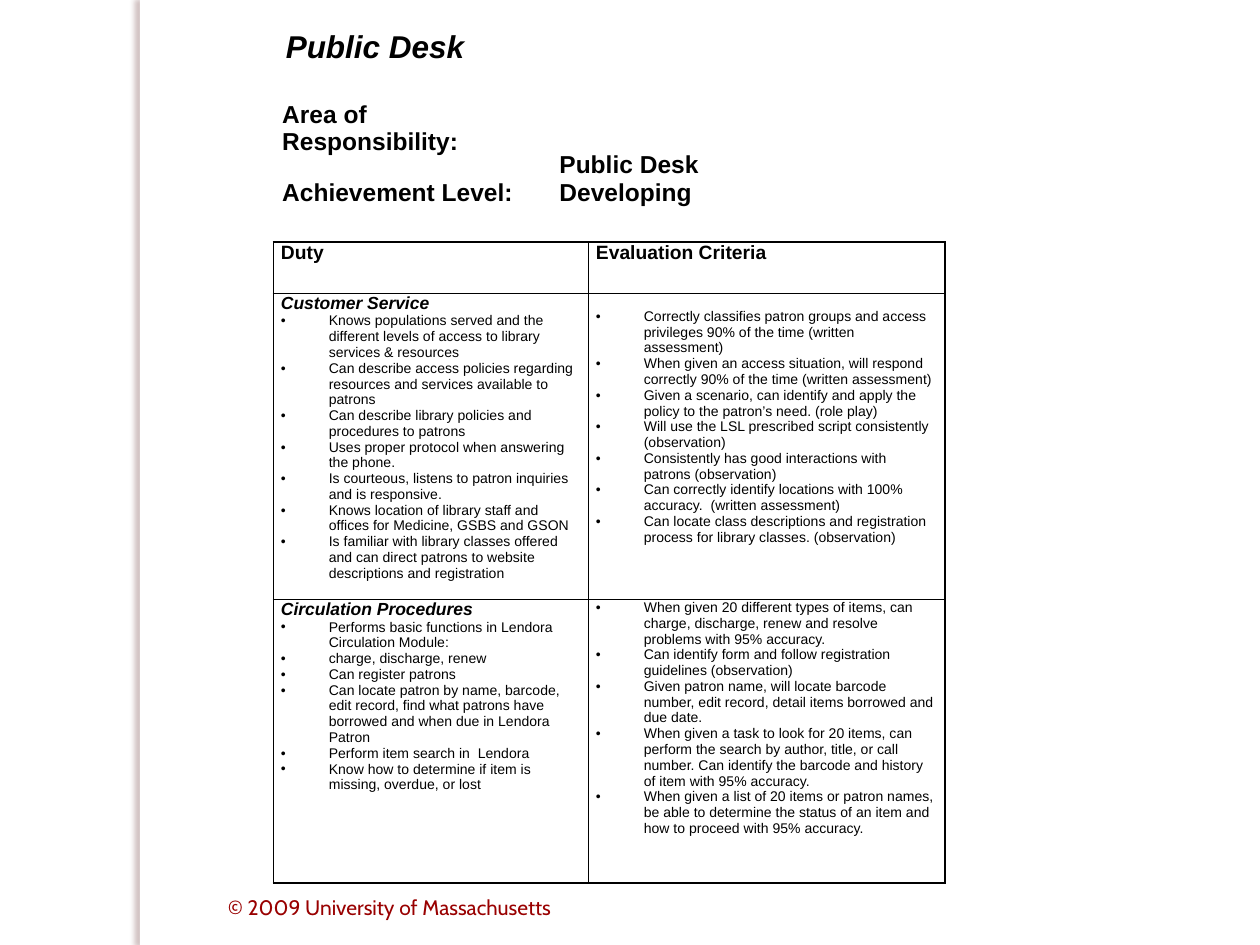
from lxml.etree import SubElement
from pptx import Presentation
from pptx.dml.color import RGBColor
from pptx.enum.shapes import MSO_SHAPE as Preset
from pptx.enum.text import MSO_ANCHOR as Anchor
from pptx.oxml.ns import qn
from pptx.util import Emu, Inches, Pt

THEME = {
    "font": "Arial", "footer_font": "Cabin",
    "ink": "000000", "paper": "FFFFFF", "accent": "990000", "shade": "511616",
    "title": 18, "summary": 14, "header": 11, "section": 10, "body": 8, "footer": 12,
}

TITLE = "Public Desk"
FOOTER = "© 2009 University of Massachusetts"
SUMMARY = [
    ("Area of Responsibility:", "Public Desk"),
    ("Achievement Level:", "Developing"),
]
HEADERS = ("Duty", "Evaluation Criteria")
SECTIONS = [
    {
        "name": "Customer Service",
        "duties": [
            "Knows populations served and the different levels of access to library services & resources",
            "Can describe access policies regarding resources and services available to patrons",
            "Can describe library policies and procedures to patrons",
            "Uses proper protocol when answering the phone.",
            "Is courteous, listens to patron inquiries and is responsive.",
            "Knows location of library staff and offices for Medicine, GSBS and GSON",
            "Is familiar with library classes offered and can direct patrons to website "
            "descriptions and registration",
        ],
        "criteria": [
            "Correctly classifies patron groups and access privileges 90% of the time (written assessment)",
            "When given an access situation, will respond correctly 90% of the time (written assessment)",
            "Given a scenario, can identify and apply the policy to the patron’s need. (role play)",
            "Will use the LSL prescribed script consistently (observation)",
            "Consistently has good interactions with patrons (observation)",
            "Can correctly identify locations with 100% accuracy.  (written assessment)",
            "Can locate class descriptions and registration process for library classes. (observation)",
        ],
        "criteria_top": 0.12,
    },
    {
        "name": "Circulation Procedures",
        "duties": [
            "Performs basic functions in Lendora Circulation Module:",
            "charge, discharge, renew",
            "Can register patrons",
            "Can locate patron by name, barcode, edit record, find what patrons have borrowed "
            "and when due in Lendora Patron",
            "Perform item search in  Lendora",
            "Know how to determine if item is missing, overdue, or lost",
        ],
        "criteria": [
            "When given 20 different types of items, can charge, discharge, renew and resolve "
            "problems with 95% accuracy.",
            "Can identify form and follow registration guidelines (observation)",
            "Given patron name, will locate barcode number, edit record, detail items borrowed and due date.",
            "When given a task to look for 20 items, can perform the search by author, title, or "
            "call number. Can identify the barcode and history of item with 95% accuracy.",
            "When given a list of 20 items or patron names, be able to determine the status of an "
            "item and how to proceed with 95% accuracy.",
        ],
        "criteria_top": 0,
    },
]

SLIDE_W, SLIDE_H = 10, 7.5
TABLE_LEFT = 2.17
SUMMARY_GRID = {"top": 0.58, "cols": (2.2, 3.95), "rows": (0.84, 0.42), "inset": 0.07}
DUTY_GRID = {"top": 1.92, "cols": (2.5, 2.83), "rows": (0.41, 2.18, 2.25), "inset": 0.06}
SUMMARY_LEAD = 0.22
HANG, TAB = Inches(0.38), Inches(0.5)


def add_bullet(paragraph):
    props = paragraph._p.get_or_add_pPr()
    props.set("marL", str(HANG))
    props.set("indent", str(-HANG))
    SubElement(props, qn("a:buFont"), typeface=THEME["font"])
    SubElement(props, qn("a:buChar"), char="•")
    tabs = SubElement(props, qn("a:tabLst"))
    SubElement(tabs, qn("a:tab"), pos=str(TAB), algn="l")


def write(frame, text, size="body", font="font", color="ink", bold=False, italic=False, bullet=False):
    """Fill the frame's empty first paragraph, or add a paragraph after the others."""
    first = frame.paragraphs[0]
    paragraph = frame.add_paragraph() if first.runs else first
    if bullet:
        add_bullet(paragraph)
    run = paragraph.add_run()
    run.text = text
    run.font.name = THEME[font]
    run.font.size = Pt(THEME[size])
    run.font.color.rgb = RGBColor.from_string(THEME[color])
    run.font.bold, run.font.italic = bold, italic


def add_grid(slide, top, cols, rows, inset):
    """Add an unfilled table and return it."""
    table = slide.shapes.add_table(
        len(rows), len(cols), Inches(TABLE_LEFT), Inches(top),
        Inches(sum(cols)), Inches(sum(rows))).table
    table.first_row = table.horz_banding = False
    for column, width in zip(table.columns, cols):
        column.width = Inches(width)
    for row, height in zip(table.rows, rows):
        row.height = Inches(height)
    for cell in table.iter_cells():
        cell.margin_left = cell.margin_right = Inches(inset)
        cell.margin_top = cell.margin_bottom = 0
        cell.fill.background()
    return table


def add_borders(cell):
    props = cell._tc.get_or_add_tcPr()
    for index, side in enumerate(("lnL", "lnR", "lnT", "lnB")):
        line = props.makeelement(qn(f"a:{side}"), {"w": str(Pt(1))})
        fill = SubElement(line, qn("a:solidFill"))
        SubElement(fill, qn("a:srgbClr"), val=THEME["ink"])
        props.insert(index, line)


def add_text_box(slide, left, top, width, height, anchor):
    frame = slide.shapes.add_textbox(*map(Inches, (left, top, width, height))).text_frame
    frame.word_wrap = True
    frame.vertical_anchor = anchor
    return frame


def add_side_bar(slide):
    bar = slide.shapes.add_shape(Preset.RECTANGLE, Inches(1.11), 0, Inches(0.08), Inches(SLIDE_H))
    bar.shadow.inherit = False
    bar.fill.solid()
    bar.fill.fore_color.rgb = RGBColor.from_string(THEME["paper"])
    bar.line.fill.background()
    effects = bar._element.spPr.find(qn("a:effectLst"))
    shadow = SubElement(effects, qn("a:outerShdw"), blurRad=str(Pt(3)), dist=str(Pt(3)),
                        dir=str(180 * 60000), algn="ctr", rotWithShape="0")
    shade = SubElement(shadow, qn("a:srgbClr"), val=THEME["shade"])
    SubElement(shade, qn("a:alpha"), val="25000")


def add_summary(slide):
    table = add_grid(slide, **SUMMARY_GRID)
    for r, pair in enumerate(SUMMARY):
        for c, text in enumerate(pair):
            write(table.cell(r, c).text_frame, text, size="summary", bold=True)
    table.cell(0, 0).margin_top = Inches(SUMMARY_LEAD)
    table.cell(0, 1).vertical_anchor = Anchor.BOTTOM


def add_duties(slide):
    table = add_grid(slide, **DUTY_GRID)
    for cell in table.iter_cells():
        add_borders(cell)
    for c, header in enumerate(HEADERS):
        write(table.cell(0, c).text_frame, header, size="header", bold=True)
    for r, section in enumerate(SECTIONS, start=1):
        duty, criteria = table.cell(r, 0), table.cell(r, 1)
        write(duty.text_frame, section["name"], size="section", bold=True, italic=True)
        criteria.margin_top = Inches(section["criteria_top"])
        for cell, key in ((duty, "duties"), (criteria, "criteria")):
            for item in section[key]:
                write(cell.text_frame, item, bullet=True)


def main():
    deck = Presentation()
    deck.slide_width, deck.slide_height = Inches(SLIDE_W), Inches(SLIDE_H)
    slide = deck.slides.add_slide(deck.slide_layouts[6])
    add_side_bar(slide)
    footer = add_text_box(slide, 1.71, 6.83, 3.54, 0.52, Anchor.BOTTOM)
    write(footer, FOOTER, size="footer", font="footer_font", color="accent")
    add_summary(slide)
    add_duties(slide)
    title = add_text_box(slide, 2.17, 0.1, 1.8, 0.53, Anchor.MIDDLE)
    title.margin_right = Emu(0)
    write(title, TITLE, size="title", bold=True, italic=True)
    deck.save("out.pptx")


if __name__ == "__main__":
    main()
